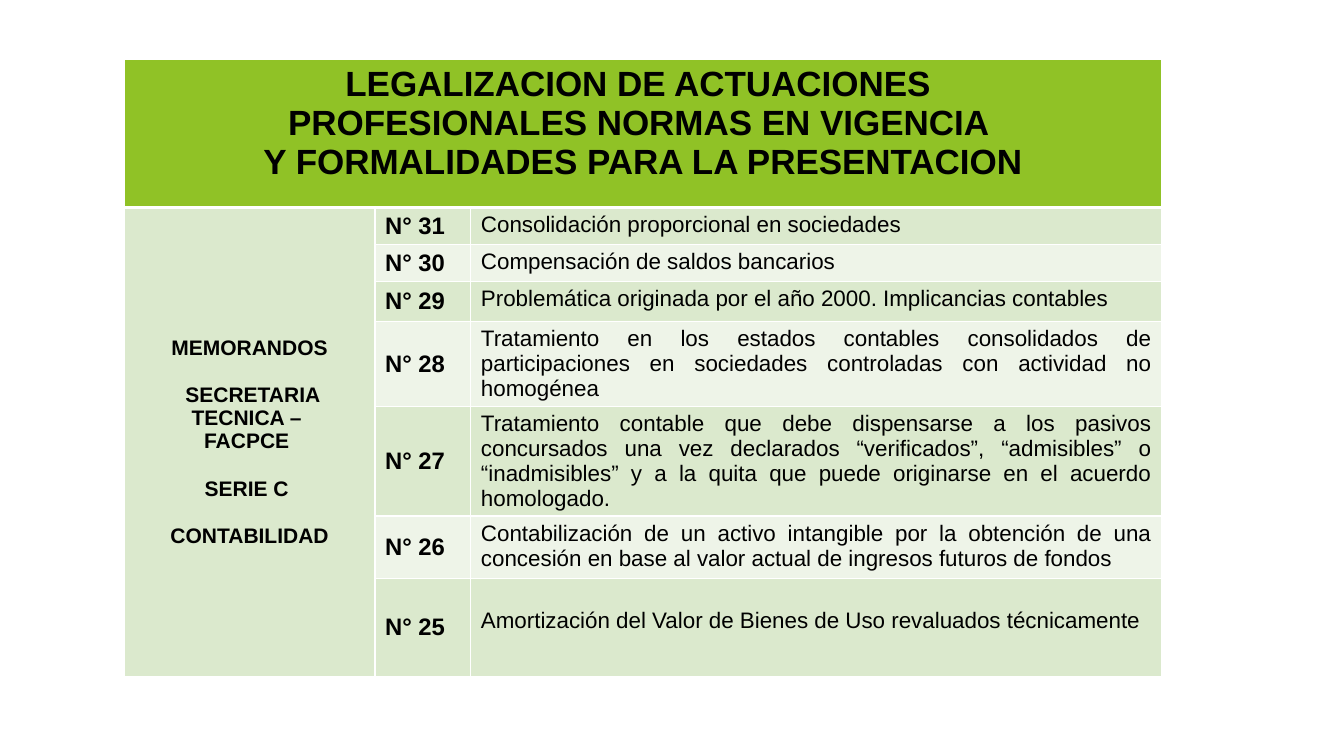
from dataclasses import dataclass

from lxml.etree import Element
from pptx import Presentation
from pptx.dml.color import RGBColor
from pptx.enum.text import MSO_ANCHOR as Anchor, PP_ALIGN as Align
from pptx.oxml import parse_xml
from pptx.oxml.ns import nsdecls
from pptx.table import Table, _Cell as Cell
from pptx.util import Inches, Pt


@dataclass(frozen=True)
class Theme:
    font: str = "Arial"
    ink: str = "000000"
    header: str = "90C226"
    dark_band: str = "DBE9CD"
    light_band: str = "EEF4E8"
    border: str = "FFFFFF"
    title_size: int = 25
    series_size: int = 15
    number_size: int = 17
    subject_size: int = 16
    thin: int = 1
    thick: int = 3


@dataclass(frozen=True)
class Grid:
    left: float
    top: float
    height: float
    columns: tuple[float, ...]
    rows: tuple[float, ...]


@dataclass(frozen=True)
class Line:
    text: str
    gap: float = 0


@dataclass(frozen=True)
class TextStyle:
    size: int
    bold: bool
    align: Align
    anchor: Anchor


@dataclass(frozen=True)
class Memo:
    number: int
    subject: str
    margin_top: float = 0.05


THEME = Theme()
SLIDE_WIDTH = Inches(13.33)
SLIDE_HEIGHT = Inches(7.5)
GRID = Grid(
    left=9.23,
    top=7.87,
    height=84,
    columns=(18.68, 7.13, 51.39),
    rows=(19.6, 4.4, 4, 5.33, 9.2, 13.2, 8.27, 12.93),
)

TITLE_STYLE = TextStyle(THEME.title_size, True, Align.CENTER, Anchor.TOP)
SERIES_STYLE = TextStyle(THEME.series_size, True, Align.CENTER, Anchor.MIDDLE)
NUMBER_STYLE = TextStyle(THEME.number_size, True, Align.LEFT, Anchor.MIDDLE)
SUBJECT_STYLE = TextStyle(THEME.subject_size, False, Align.JUSTIFY, Anchor.TOP)

TITLE = (
    Line("LEGALIZACION DE ACTUACIONES "),
    Line("PROFESIONALES NORMAS EN VIGENCIA "),
    Line("Y FORMALIDADES PARA LA PRESENTACION"),
)
SERIES = (
    Line("MEMORANDOS"),
    Line(" SECRETARIA TECNICA – ", gap=17),
    Line("FACPCE "),
    Line("SERIE C ", gap=17),
    Line("CONTABILIDAD", gap=17),
)
MEMOS = (
    Memo(31, "Consolidación proporcional en sociedades"),
    Memo(30, "Compensación de saldos bancarios"),
    Memo(29, "Problemática originada por el año 2000. Implicancias contables"),
    Memo(28, "Tratamiento en los estados contables consolidados de participaciones "
             "en sociedades controladas con actividad no homogénea"),
    Memo(27, "Tratamiento contable que debe dispensarse a los pasivos concursados "
             "una vez declarados “verificados”, “admisibles” o “inadmisibles” y a la "
             "quita que puede originarse en el acuerdo homologado."),
    Memo(26, "Contabilización de un activo intangible por la obtención de una "
             "concesión en base al valor actual de ingresos futuros de fondos"),
    Memo(25, "Amortización del Valor de Bienes de Uso revaluados técnicamente",
         margin_top=0.3),
)


def across(share: float) -> int:
    return round(SLIDE_WIDTH * share / 100)


def down(share: float) -> int:
    return round(SLIDE_HEIGHT * share / 100)


def border_line(side: str, points: int) -> Element:
    return parse_xml(
        f'<a:ln{side} {nsdecls("a")} w="{Pt(points)}"><a:solidFill>'
        f'<a:srgbClr val="{THEME.border}"/></a:solidFill></a:ln{side}>'
    )


def paint_cell(cell: Cell, color: str, top: int, bottom: int) -> None:
    cell.fill.solid()
    cell.fill.fore_color.rgb = RGBColor.from_string(color)
    widths = {"L": THEME.thin, "R": THEME.thin, "T": top, "B": bottom}
    properties = cell._tc.get_or_add_tcPr()
    for position, (side, points) in enumerate(widths.items()):
        properties.insert(position, border_line(side, points))


def write_cell(cell: Cell, lines: tuple[Line, ...], style: TextStyle) -> None:
    cell.vertical_anchor = style.anchor
    font_format = {"name": THEME.font, "size": Pt(style.size), "bold": style.bold}
    for index, line in enumerate(lines):
        frame = cell.text_frame
        paragraph = frame.add_paragraph() if index else frame.paragraphs[0]
        paragraph.alignment = style.align
        if line.gap:
            paragraph.space_before = Pt(line.gap)
        run = paragraph.add_run()
        run.text = line.text
        for name, value in font_format.items():
            setattr(run.font, name, value)
        run.font.color.rgb = RGBColor.from_string(THEME.ink)


def paint_table(table: Table) -> None:
    for row_index, row in enumerate(table.rows):
        band = THEME.dark_band if row_index % 2 else THEME.light_band
        for column_index, cell in enumerate(row.cells):
            color = THEME.dark_band if column_index == 0 else band
            paint_cell(
                cell,
                color if row_index else THEME.header,
                THEME.thick if row_index == 1 else THEME.thin,
                THEME.thin if row_index else THEME.thick,
            )


def add_memo_table(slide) -> None:
    shape = slide.shapes.add_table(
        len(GRID.rows), len(GRID.columns), across(GRID.left), down(GRID.top),
        across(sum(GRID.columns)), down(GRID.height),
    )
    table = shape.table
    for name, value in {"first_row": False, "horz_banding": False}.items():
        setattr(table, name, value)
    for column, share in zip(table.columns, GRID.columns):
        column.width = across(share)
    for row, share in zip(table.rows, GRID.rows):
        row.height = down(share)
    shape.height = down(GRID.height)

    paint_table(table)
    table.cell(0, 0).merge(table.cell(0, len(GRID.columns) - 1))
    table.cell(1, 0).merge(table.cell(len(MEMOS), 0))
    write_cell(table.cell(0, 0), TITLE, TITLE_STYLE)
    write_cell(table.cell(1, 0), SERIES, SERIES_STYLE)
    for row_index, memo in enumerate(MEMOS, start=1):
        write_cell(table.cell(row_index, 1), (Line(f"N° {memo.number}"),), NUMBER_STYLE)
        subject_cell = table.cell(row_index, 2)
        subject_cell.margin_top = Inches(memo.margin_top)
        write_cell(subject_cell, (Line(memo.subject),), SUBJECT_STYLE)


def main() -> None:
    presentation = Presentation()
    size = {"slide_width": SLIDE_WIDTH, "slide_height": SLIDE_HEIGHT}
    for name, value in size.items():
        setattr(presentation, name, value)
    slide = presentation.slides.add_slide(presentation.slide_layouts[6])
    add_memo_table(slide)
    presentation.save("out.pptx")


if __name__ == "__main__":
    main()
